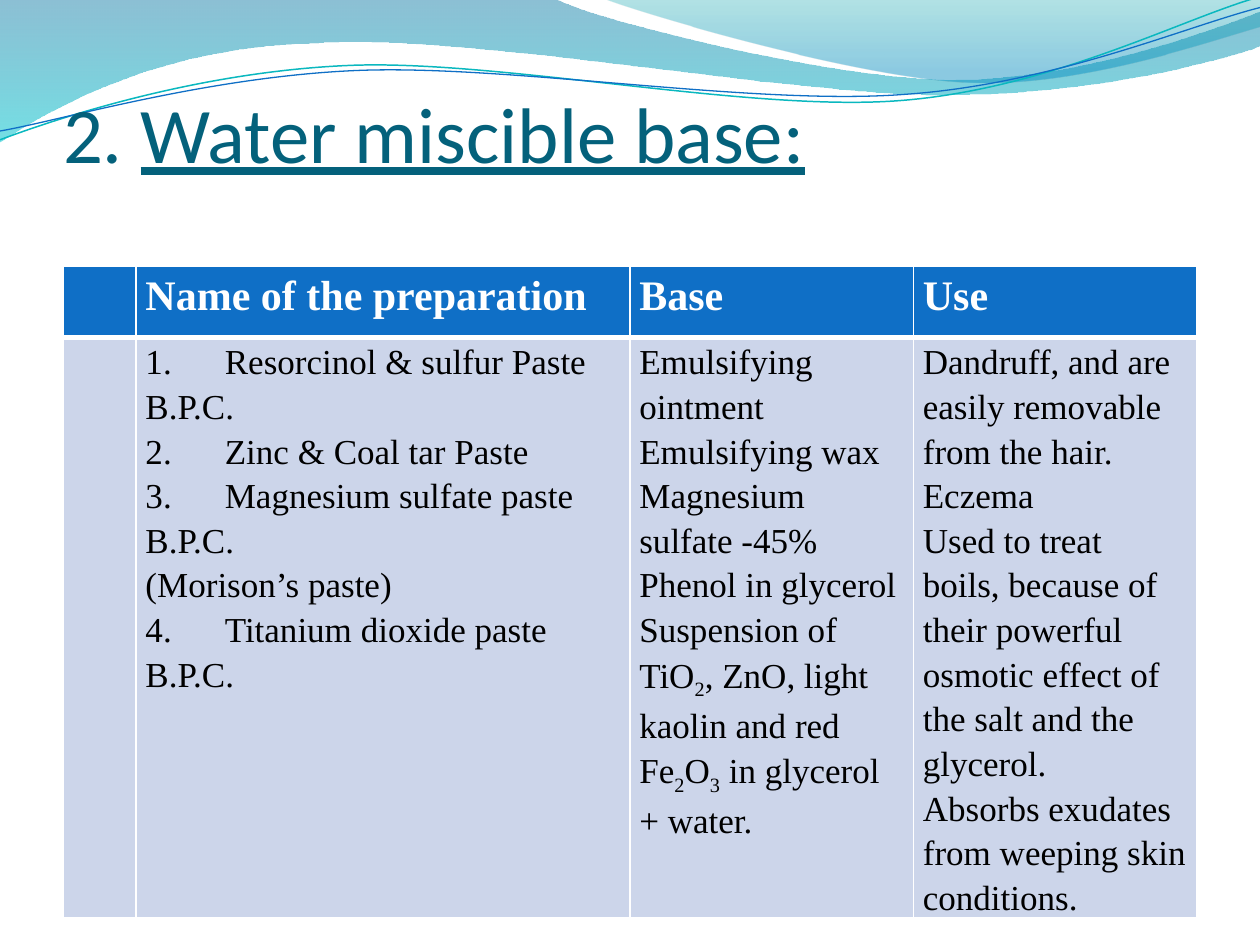
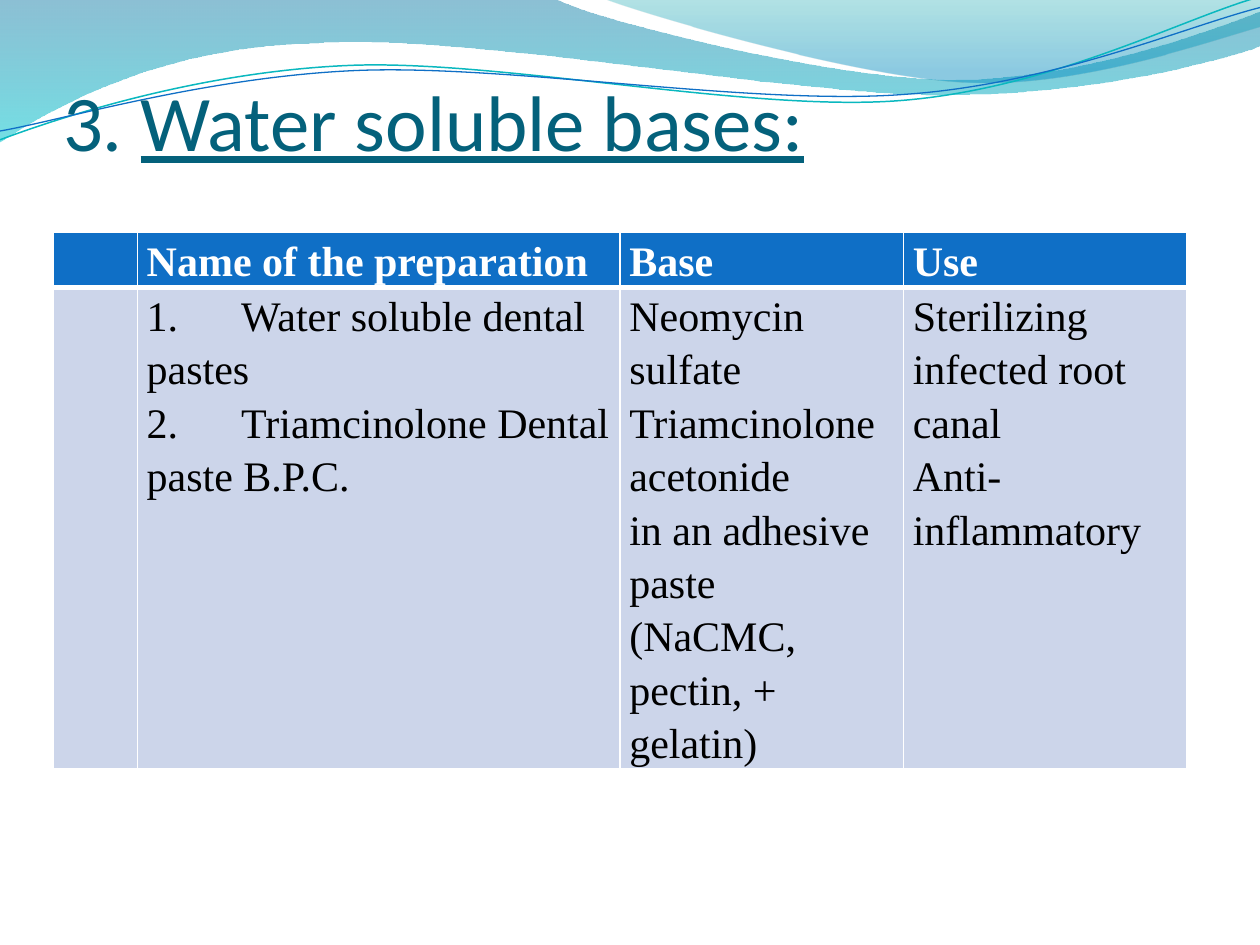
from lxml import etree
from pptx import Presentation
from pptx import util as u
from pptx.dml.color import RGBColor
from pptx.enum import text
from pptx.oxml.ns import qn

WIDTH, HEIGHT = 10, 7.5
BLUE, PALE, TITLE, WHITE, BLACK = "0F6FC6", "CCD5EA", "04617B", "FFFFFF", "000000"
TITLE_FONT, TABLE_FONT = "Calibri", "Times New Roman"
HEADINGS = ["", "Name of the preparation", "Base", "Use"]
TITLE_TOP = 0.6
CELL_MARGIN = u.Pt(5.4)

# Text between tildes is subscript; a tab separates a number from its item.
SLIDES = [
    dict(
        number="2. ", title="Water miscible base:", title_bottom=1.42,
        left=0.5, top=2.11, columns=[0.58, 3.92, 2.25, 2.25], rows=[0.57, 4.6],
        size=20, tab=0.63,
        body=[
            [],
            ["1.\tResorcinol & sulfur Paste B.P.C.",
             "2.\tZinc & Coal tar Paste",
             "3.\tMagnesium sulfate paste B.P.C.",
             "(Morison’s paste)",
             "4.\tTitanium dioxide paste B.P.C."],
            ["Emulsifying ointment",
             "Emulsifying wax",
             "Magnesium sulfate -45%",
             "Phenol in glycerol",
             "Suspension of TiO~2~, ZnO, light kaolin and red Fe~2~O~3~ in glycerol + water."],
            ["Dandruff, and are easily removable from the hair.",
             "Eczema",
             "Used to treat boils, because of their powerful osmotic effect "
             "of the salt and the glycerol.",
             "Absorbs exudates from weeping skin conditions."],
        ],
    ),
    dict(
        number="3. ", title="Water soluble bases:", title_bottom=1.33,
        left=0.42, top=1.84, columns=[0.67, 3.83, 2.25, 2.25], rows=[0.44, 3.82],
        size=24, tab=0.75,
        body=[
            [],
            ["1.\tWater soluble dental pastes",
             "2.\tTriamcinolone Dental paste B.P.C."],
            ["Neomycin sulfate",
             "Triamcinolone acetonide",
             "in an adhesive paste",
             "(NaCMC, pectin, + gelatin)"],
            ["Sterilizing infected root canal",
             "Anti-inflammatory"],
        ],
    ),
]

# Each outline is a start point, then lines (x, y) or curves (two controls and an end).
# A gradient stop is position, colour, opacity in percent.
WAVES = [
    dict(outline=[(0, 0), (4.4, -0.01), (4.76, 0.17, 6.64, 0.63, 7.58, 0.63),
                  (8.53, 0.63, 9.58, 0.26, 10, 0.09), (10.01, 0.36),
                  (9.83, 0.44, 8.7, 0.76, 7.46, 0.75), (6.22, 0.75, 3.82, 0.28, 2.57, 0.34),
                  (1.29, 0.36, 0.46, 0.83, -0.01, 1.13)],
         gradient=[(0, "0074A1", 45), (1, "00C6CF", 55)]),
    dict(outline=[(4.79, -0.01), (5.09, 0.11, 6.82, 0.62, 7.69, 0.65),
                  (8.56, 0.69, 9.61, 0.32, 10, 0.21), (10, 0)],
         gradient=[(0, "00A1A9", 30), (0.8, "008BBF", 45)]),
    dict(outline=[(0, 1.11), (0.48, 0.93, 1.58, 0.57, 2.77, 0.52),
                  (3.95, 0.47, 5.93, 0.89, 7.13, 0.8), (8.33, 0.71, 9.38, 0.15, 9.98, -0.02)],
         line=("0AB8BF", 0.85)),
    dict(outline=[(0, 1.04), (0.47, 0.96, 1.64, 0.61, 2.83, 0.56),
                  (4.03, 0.51, 5.97, 0.84, 7.17, 0.75), (8.36, 0.67, 9.41, 0.21, 10, 0.06)],
         line=(BLUE, 0.75)),
]


def color(hex_string):
    return RGBColor.from_string(hex_string)


def add_text(paragraph, content, size, font, ink, bold=False, underline=False, subscript=False):
    run = paragraph.add_run()
    run.text = content
    run.font.size, run.font.name = u.Pt(size), font
    run.font.bold, run.font.underline = bold, underline
    run.font.color.rgb = color(ink)
    if subscript:
        run.font._element.set("baseline", "-25000")


def bend(shape, outline):
    """Join the three straight steps of each curve into one Bézier segment."""
    steps = iter(list(shape.element.iter(qn("a:lnTo"))))
    for segment in outline[1:]:
        first = next(steps)
        if len(segment) == 6:
            first.tag = qn("a:cubicBezTo")
            for _ in range(2):
                step = next(steps)
                first.append(step[0])
                step.getparent().remove(step)


def draw_wave(slide, outline, gradient=None, line=None):
    points = [(u.Inches(segment[i]), u.Inches(segment[i + 1]))
              for segment in outline for i in range(0, len(segment), 2)]
    builder = slide.shapes.build_freeform(*points[0], scale=1.0)
    builder.add_line_segments(points[1:], close=bool(gradient))
    shape = builder.convert_to_shape()
    bend(shape, outline)
    shape.shadow.inherit = False
    if line:
        shape.fill.background()
        shape.line.color.rgb, shape.line.width = color(line[0]), u.Pt(line[1])
        return shape
    shape.line.fill.background()
    shape.fill.gradient()
    shape.fill.gradient_angle = 270
    for stop, (position, tint, _) in zip(shape.fill.gradient_stops, gradient):
        stop.position, stop.color.rgb = position, color(tint)
    for tint, (_, _, opacity) in zip(shape.element.iter(qn("a:srgbClr")), gradient):
        etree.SubElement(tint, qn("a:alpha"), val=str(opacity * 1000))
    return shape


def put_waves_on_layout(slide):
    """Draw the waves once and hand them to the layout that every slide shares."""
    for index, wave in enumerate(WAVES):
        element = draw_wave(slide, **wave).element
        element.nvSpPr.cNvPr.set("id", str(100 + index))
        slide.slide_layout.shapes.element.append(element)


def set_borders(cell, **widths):
    properties = cell._tc.get_or_add_tcPr()
    for index, side in enumerate("LRTB"):
        border = etree.Element(qn("a:ln" + side), w=str(u.Pt(widths.get(side, 1))))
        fill = etree.SubElement(border, qn("a:solidFill"))
        etree.SubElement(fill, qn("a:srgbClr"), val=WHITE)
        properties.insert(index, border)


def fill_cell(cell, lines, background, tab, **text_format):
    cell.fill.solid()
    cell.fill.fore_color.rgb = color(background)
    cell.margin_left = cell.margin_right = CELL_MARGIN
    cell.margin_top = cell.margin_bottom = 0
    frame = cell.text_frame
    for index, content in enumerate(lines):
        paragraph = frame.add_paragraph() if index else frame.paragraphs[0]
        paragraph.line_spacing = 1.15
        if "\t" in content:
            stops = etree.SubElement(paragraph._p.get_or_add_pPr(), qn("a:tabLst"))
            etree.SubElement(stops, qn("a:tab"), pos=str(u.Inches(tab)), algn="l")
        for part, piece in enumerate(content.split("~")):
            if piece:
                add_text(paragraph, piece, font=TABLE_FONT, subscript=part % 2 == 1,
                         **text_format)


def add_title(slide, number, title, bottom):
    shape = slide.shapes.title
    shape.left, shape.top = u.Inches(0.5), u.Inches(TITLE_TOP)
    shape.width, shape.height = u.Inches(WIDTH - 1), u.Inches(bottom - TITLE_TOP)
    frame = shape.text_frame
    frame.margin_left = frame.margin_top = frame.margin_right = frame.margin_bottom = 0
    frame.word_wrap, frame.auto_size = True, text.MSO_AUTO_SIZE.NONE
    frame.vertical_anchor = text.MSO_ANCHOR.BOTTOM
    paragraph = frame.paragraphs[0]
    paragraph.alignment = text.PP_ALIGN.LEFT
    add_text(paragraph, number, 45, TITLE_FONT, TITLE)
    add_text(paragraph, title, 45, TITLE_FONT, TITLE, underline=True)


def add_preparations(slide, content):
    columns, rows = content["columns"], content["rows"]
    table = slide.shapes.add_table(
        len(rows), len(columns), u.Inches(content["left"]), u.Inches(content["top"]),
        u.Inches(sum(columns)), u.Inches(sum(rows))).table
    for row, height in zip(table.rows, rows):
        row.height = u.Inches(height)
    for index, width in enumerate(columns):
        table.columns[index].width = u.Inches(width)
        header, body = table.cell(0, index), table.cell(1, index)
        heading = [HEADINGS[index]] if HEADINGS[index] else []
        fill_cell(header, heading, BLUE, content["tab"], size=24, ink=WHITE, bold=True)
        fill_cell(body, content["body"][index], PALE, content["tab"],
                  size=content["size"], ink=BLACK)
        set_borders(header, B=3)
        set_borders(body, T=3)


def main():
    presentation = Presentation()
    presentation.slide_width, presentation.slide_height = u.Inches(WIDTH), u.Inches(HEIGHT)
    title_only = presentation.slide_layouts[5]
    for index, content in enumerate(SLIDES):
        slide = presentation.slides.add_slide(title_only)
        if index == 0:
            put_waves_on_layout(slide)
        add_title(slide, content["number"], content["title"], content["title_bottom"])
        add_preparations(slide, content)
    presentation.save("out.pptx")


if __name__ == "__main__":
    main()
